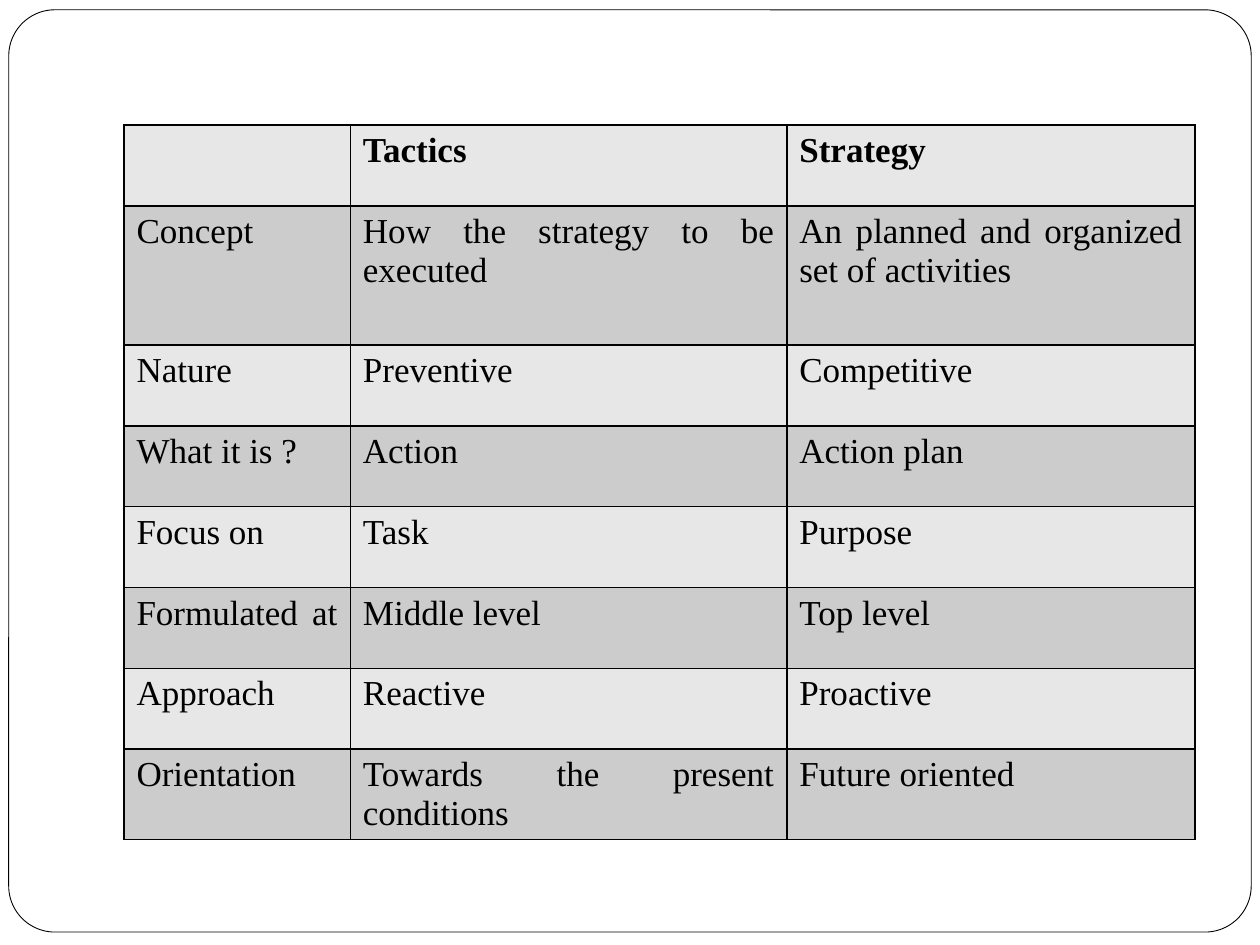
from dataclasses import dataclass

from lxml.etree import SubElement
from pptx import Presentation
from pptx.dml.color import RGBColor
from pptx.enum.shapes import MSO_SHAPE
from pptx.enum.text import PP_ALIGN
from pptx.oxml.ns import qn
from pptx.util import Pt

COLORS = {
    "background": "FFFFFF",
    "ink": "000000",
    "light_row": "E7E7E7",
    "dark_row": "CCCCCC",
}
FONT_FORMAT = {"name": "Times New Roman", "size": Pt(20)}
BORDER_WIDTH = Pt(1)
COLUMN_WIDTHS = (129.4, 249.4, 233.2)
ROW_HEIGHT = 46.2


@dataclass
class ComparisonRow:
    aspect: str
    tactics: str
    strategy: str
    height: float = ROW_HEIGHT
    bold: bool = False


ROWS = [
    ComparisonRow("", "Tactics ", "Strategy ", bold=True),
    ComparisonRow(
        "Concept ",
        "How the strategy to be executed ",
        "An planned and organized set of activities ",
        height=79.6,
    ),
    ComparisonRow("Nature ", "Preventive ", "Competitive "),
    ComparisonRow("What it is ?", "Action ", "Action plan "),
    ComparisonRow("Focus on ", "Task ", "Purpose "),
    ComparisonRow("Formulated at ", "Middle level ", "Top level "),
    ComparisonRow("Approach ", "Reactive ", "Proactive "),
    ComparisonRow("Orientation ", "Towards the present conditions ", "Future oriented "),
]


def color(name: str) -> RGBColor:
    return RGBColor.from_string(COLORS[name])


def draw_frame(slide) -> None:
    frame = slide.shapes.add_shape(
        MSO_SHAPE.ROUNDED_RECTANGLE, Pt(5), Pt(5.6), Pt(710), Pt(527)
    )
    frame.adjustments[0] = 0.05
    frame.shadow.inherit = False
    frame.fill.solid()
    frame.fill.fore_color.rgb = color("background")
    frame.line.color.rgb = color("ink")
    frame.line.width = Pt(0.5)


def add_borders(cell) -> None:
    properties = cell._tc.get_or_add_tcPr()
    for position, side in enumerate(("lnL", "lnR", "lnT", "lnB")):
        border = SubElement(properties, qn(f"a:{side}"), w=str(BORDER_WIDTH))
        fill = SubElement(border, qn("a:solidFill"))
        SubElement(fill, qn("a:srgbClr"), val=COLORS["ink"])
        properties.insert(position, border)


def fill_cell(cell, text: str, fill_name: str, bold: bool) -> None:
    cell.fill.solid()
    cell.fill.fore_color.rgb = color(fill_name)
    add_borders(cell)
    if not text:
        return
    paragraph = cell.text_frame.paragraphs[0]
    paragraph.alignment = PP_ALIGN.JUSTIFY
    run = paragraph.add_run()
    run.text = text
    for attribute, value in {**FONT_FORMAT, "bold": bold}.items():
        setattr(run.font, attribute, value)
    run.font.color.rgb = color("ink")


def draw_table(slide, rows: list[ComparisonRow]) -> None:
    table = slide.shapes.add_table(
        len(rows),
        len(COLUMN_WIDTHS),
        Pt(70.8),
        Pt(71.4),
        Pt(sum(COLUMN_WIDTHS)),
        Pt(sum(row.height for row in rows)),
    ).table
    table.first_row = False
    table.horz_banding = False
    for column, width in zip(table.columns, COLUMN_WIDTHS):
        column.width = Pt(width)
    for index, row in enumerate(rows):
        table.rows[index].height = Pt(row.height)
        fill_name = "dark_row" if index % 2 else "light_row"
        texts = (row.aspect, row.tactics, row.strategy)
        for cell, text in zip(table.rows[index].cells, texts):
            fill_cell(cell, text, fill_name, row.bold)


def main() -> None:
    presentation = Presentation()
    presentation.slide_width = Pt(720)
    presentation.slide_height = Pt(540)
    slide = presentation.slides.add_slide(presentation.slide_layouts[6])
    draw_frame(slide)
    draw_table(slide, ROWS)
    presentation.save("out.pptx")


if __name__ == "__main__":
    main()
